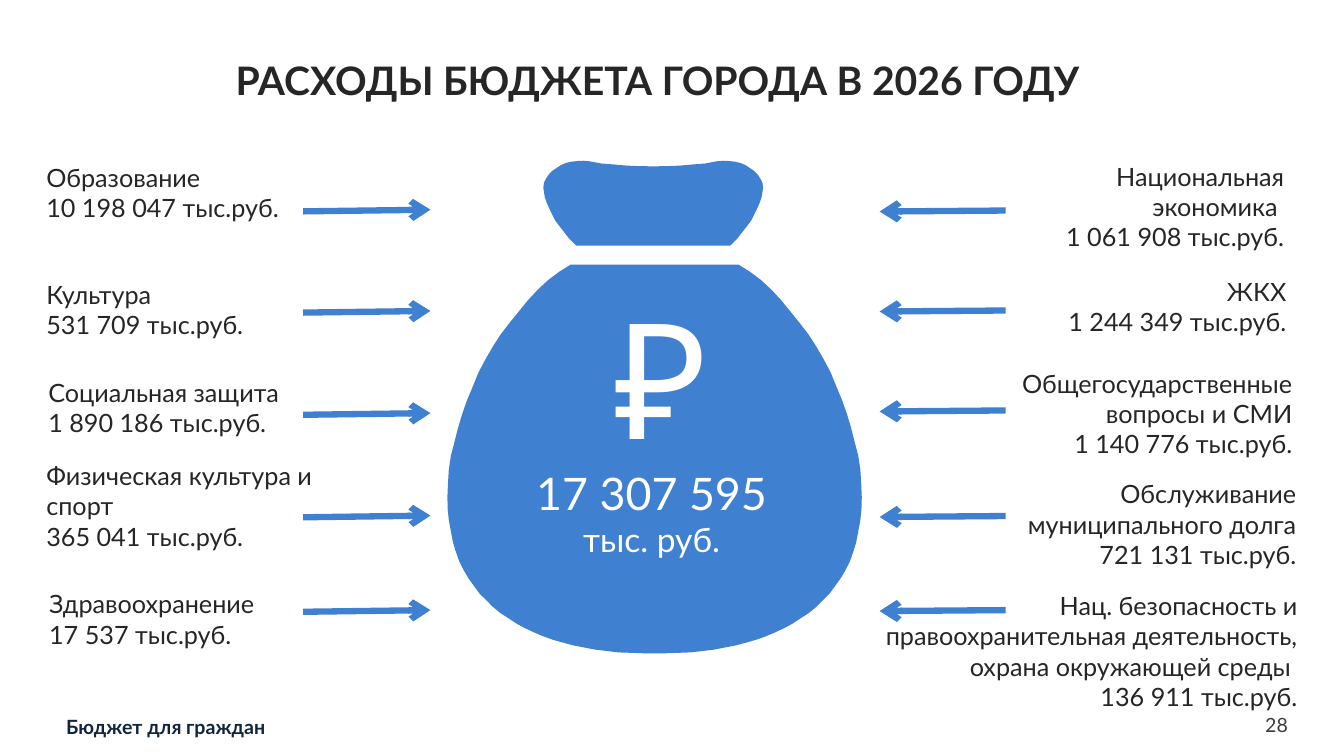
from lxml import etree
from pptx import Presentation
from pptx.dml.color import RGBColor
from pptx.enum import shapes, text
from pptx.oxml.ns import qn
from pptx.util import Pt

COLORS = {"blue": "4080D0", "ink": "262626", "white": "FFFFFF",
          "navy": "10253F", "gray": "3C3C3C"}
LEFT, CENTER, RIGHT = text.PP_ALIGN.LEFT, text.PP_ALIGN.CENTER, text.PP_ALIGN.RIGHT
TOP, MIDDLE = text.MSO_ANCHOR.TOP, text.MSO_ANCHOR.MIDDLE

# Right halves of the bag outlines: distance from the axis, height on the slide
NECK_AXIS, BODY_AXIS = 466.6, 467.6
NECK = [(0, 118.8), (9.5, 118.7), (19, 118.3), (28, 117.5), (37, 116.8),
        (45.5, 115.2), (49.7, 114.8), (54, 115), (58.5, 115.5), (62.5, 116.5),
        (66, 118), (69, 120), (72, 122), (74.5, 124.5), (76.5, 127.5),
        (78, 130.5), (78.5, 134), (78, 137.5), (77.5, 140.5), (76, 145),
        (73.5, 150.5), (70, 157.5), (67, 161.5), (63.5, 166), (60, 170.5),
        (55, 175.5)]
BODY = [(60, 189), (68, 194), (76, 200), (83.5, 207), (90.5, 214.5),
        (97, 222.5), (103.5, 230.5), (110, 239), (115.5, 247.5), (121, 257),
        (126, 266.5), (130, 276.5), (134, 286), (137.5, 296), (140.5, 306),
        (143, 316), (145.5, 325.5), (147, 335.5), (147.6, 345.5), (148, 355),
        (147.8, 363.5), (147, 371.5), (145.5, 379.5), (144, 387.5), (142, 394),
        (139.5, 401), (136.5, 407), (133, 413), (129, 418.5), (125, 424),
        (120.5, 428.5), (115.5, 433.5), (110, 438), (104.5, 441.5),
        (98.5, 445.5), (93, 448.5), (86.5, 451.5), (79.5, 454.5), (72.5, 457),
        (65.5, 459), (58, 461), (42.5, 464), (26, 466), (8.5, 466.6)]

# Left, top, width, height, name, amount, arrow start height
ITEMS_LEFT = [
    (26, 112.3, 184, 51, "Образование", "10 198 047", 151),
    (26, 195.8, 187, 51, "Культура", "531 709", 223.3),
    (27.4, 265.7, 194, 51, "Социальная защита", "1 890 186", 296.3),
    (26, 325.4, 207.4, 73, "Физическая культура и спорт", "365 041", 369.5),
    (28, 416.9, 187, 51, "Здравоохранение", "17 537", 437),
]
ITEMS_RIGHT = [
    (743, 111.6, 181.4, 73, "Национальная экономика ", "1 061 908", 150.4),
    (752.4, 193.7, 173.5, 51, "ЖКХ", "1 244 349", 221.8),
    (714.2, 259.2, 216, 73, "Общегосударственные вопросы и СМИ", "1 140 776", 293.2),
    (709.9, 338.4, 223.2, 73, "Обслуживание муниципального долга", "721 131", 368.6),
    (606.2, 418.3, 327.6, 94, "Нац. безопасность и правоохранительная "
     "деятельность, охрана окружающей среды ", "136 911", 435.8),
]


class Deck:
    font = "Lato"

    def __init__(self, slide):
        self.shapes = slide.shapes

    def color(self, name):
        return RGBColor.from_string(COLORS[name])

    def paint(self, sp):
        sp.shadow.inherit = False
        sp.fill.solid()
        sp.fill.fore_color.rgb = self.color("blue")
        sp.line.fill.background()

    def set_text(self, sp, lines, sizes, color, align, anchor, bold=False):
        tf = sp.text_frame
        tf.word_wrap = True
        tf.vertical_anchor = anchor
        tf.text = "\n".join(lines)
        for p, size in zip(tf.paragraphs, sizes):
            p.alignment = align
            for r in p.runs:
                r.font.name, r.font.size, r.font.bold = self.font, Pt(size), bold
                r.font.color.rgb = self.color(color)
        return tf

    def label(self, box, lines, sizes, color="ink", align=LEFT, anchor=TOP,
              bold=False, inset=True):
        sp = self.shapes.add_textbox(*map(Pt, box))
        tf = self.set_text(sp, lines, sizes, color, align, anchor, bold)
        if not inset:
            tf.margin_left = tf.margin_right = tf.margin_top = tf.margin_bottom = 0
        return tf

    def outline(self, axis, half):
        mirrored = [(-dx, y) for dx, y in reversed(half)]
        points = [(Pt(axis + dx), Pt(y)) for dx, y in half + mirrored]
        builder = self.shapes.build_freeform(*points[0], scale=1.0)
        builder.add_line_segments(points[1:], close=True)
        self.paint(builder.convert_to_shape())

    def ellipse(self, box, line, size):
        sp = self.shapes.add_shape(shapes.MSO_SHAPE.OVAL, *map(Pt, box))
        self.paint(sp)
        self.set_text(sp, [line], [size], "white", CENTER, MIDDLE)

    def arrow(self, x1, y1, x2, y2):
        sp = self.shapes.add_connector(
            shapes.MSO_CONNECTOR.STRAIGHT, *map(Pt, (x1, y1, x2, y2)))
        sp.line.width = Pt(4.5)
        sp.line.color.rgb = self.color("blue")
        props = sp._element.spPr
        etree.SubElement(props.find(qn("a:ln")), qn("a:tailEnd"), type="arrow")
        etree.SubElement(props, qn("a:effectLst"))


def main():
    prs = Presentation()
    prs.slide_width, prs.slide_height = Pt(960), Pt(540)
    deck = Deck(prs.slides.add_slide(prs.slide_layouts[6]))

    # Footer and title
    deck.label((902, 509, 18, 17.3), ["28"], [14], "gray", RIGHT, MIDDLE, inset=False)
    deck.label((47.3, 510.5, 500, 17.3), ["Бюджет для граждан"], [14], "navy",
               bold=True, inset=False)
    title = deck.label((41.8, 31.7, 855.4, 54.7), ["РАСХОДЫ БЮДЖЕТА ГОРОДА В 2026 ГОДУ"],
                       [28], align=CENTER, anchor=MIDDLE, bold=True)
    title.paragraphs[0].line_spacing = 0.9

    # Money bag with the total
    deck.outline(NECK_AXIS, NECK)
    deck.outline(BODY_AXIS, BODY)
    deck.ellipse((408.2, 193, 128.2, 149.8), "₽", 115)
    deck.label((333.4, 329, 264.2, 104.4), ["17 307 595", "тыс. руб."], [32, 24],
               "white", CENTER)

    # Spending items with arrows towards the bag
    for items, align, start, end, rise in (
            (ITEMS_LEFT, LEFT, 216.5, 307.5, -1.2),
            (ITEMS_RIGHT, RIGHT, 718.3, 628.3, 0.7)):
        for *box, name, amount, y in items:
            deck.label(box, [name, f"{amount} тыс.руб."], [18, 18], align=align)
            deck.arrow(start, y, end, y + rise)

    prs.save("out.pptx")


if __name__ == "__main__":
    main()
